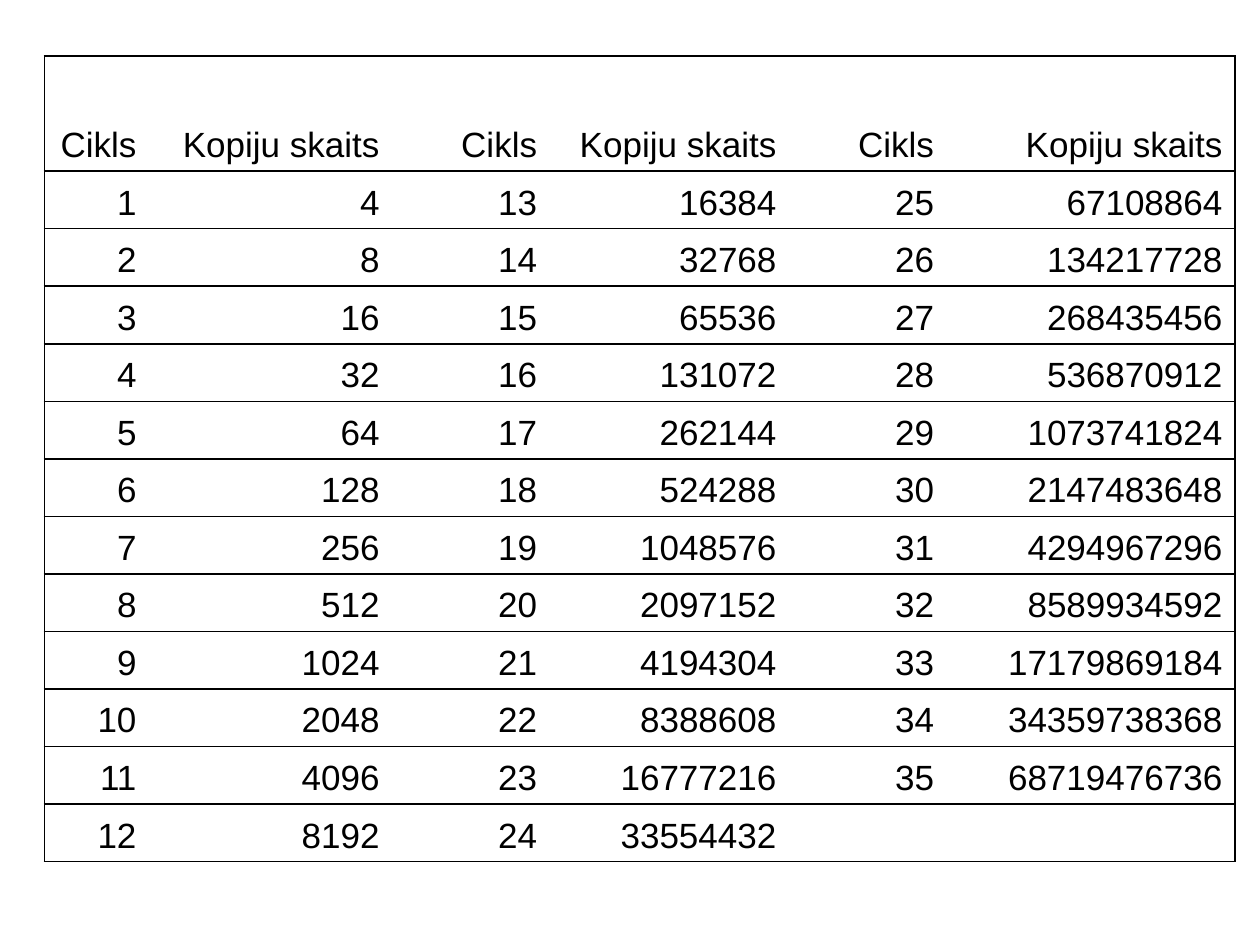
from dataclasses import dataclass

from lxml.etree import SubElement
from pptx import Presentation
from pptx.dml.color import RGBColor
from pptx.enum.text import MSO_ANCHOR as Anchor, PP_ALIGN as Align
from pptx.oxml.ns import qn
from pptx.util import Pt


@dataclass(frozen=True)
class Theme:
    font: str = "Arial"
    size: float = 20
    ink: str = "000000"
    paper: str = "FFFFFF"
    rule: float = 1


THEME = Theme()
LAST_CYCLE = 35
CYCLES_PER_BLOCK = 12
HEADINGS = ("Cikls", "Kopiju skaits")
COLUMN_WIDTHS = (59.8, 139, 31.7, 58.3, 136.8, 31.7, 58.3, 164.9)
BLOCK_STEP = 3  # cycle column, copies column, gap column
BLOCK_STARTS = range(0, len(COLUMN_WIDTHS), BLOCK_STEP)
ROW_HEIGHT = 32.9
HEADER_HEIGHT = 2 * ROW_HEIGHT


def copy_rows():
    """Lay out the cycles block by block; each cycle doubles the copies."""
    rows = [[""] * len(COLUMN_WIDTHS) for _ in range(CYCLES_PER_BLOCK + 1)]
    for start in BLOCK_STARTS:
        rows[0][start:start + 2] = HEADINGS
    for cycle in range(1, LAST_CYCLE + 1):
        block, line = divmod(cycle - 1, CYCLES_PER_BLOCK)
        start = BLOCK_STARTS[block]
        rows[line + 1][start:start + 2] = str(cycle), str(2 ** (cycle + 1))
    return rows


def set_borders(cell, visible):
    """Rule the sides named in visible and clear the others."""
    properties = cell._tc.get_or_add_tcPr()
    for side in "LRTB":
        line = SubElement(properties, qn(f"a:ln{side}"), w=str(Pt(THEME.rule)))
        if side in visible:
            fill = SubElement(line, qn("a:solidFill"))
            SubElement(fill, qn("a:srgbClr"), val=THEME.ink)
        else:
            SubElement(line, qn("a:noFill"))


def style_cell(cell, text):
    cell.fill.solid()
    cell.fill.fore_color.rgb = RGBColor.from_string(THEME.paper)
    cell.vertical_anchor = Anchor.BOTTOM
    cell.text_frame.text = text
    para = cell.text_frame.paragraphs[0]
    para.alignment = Align.RIGHT
    para.font.name = THEME.font
    para.font.size = Pt(THEME.size)
    para.font.color.rgb = RGBColor.from_string(THEME.ink)


def add_copy_table(page, left, top):
    rows = copy_rows()
    heights = [HEADER_HEIGHT] + [ROW_HEIGHT] * CYCLES_PER_BLOCK
    table = page.shapes.add_table(
        len(rows), len(COLUMN_WIDTHS), Pt(left), Pt(top),
        Pt(sum(COLUMN_WIDTHS)), Pt(sum(heights))).table
    table.first_row = False
    table.horz_banding = False

    # Grid sizes
    for column, width in zip(table.columns, COLUMN_WIDTHS):
        column.width = Pt(width)
    for row, height in zip(table.rows, heights):
        row.height = Pt(height)

    # Cells: rules between rows, and an outer frame
    outer_sides = {0: "L", len(COLUMN_WIDTHS) - 1: "R"}
    for row_index, values in enumerate(rows):
        for column_index, value in enumerate(values):
            cell = table.cell(row_index, column_index)
            set_borders(cell, "TB" + outer_sides.get(column_index, ""))
            style_cell(cell, value)


def main():
    deck = Presentation()
    deck.slide_width, deck.slide_height = Pt(720), Pt(540)
    page = deck.slides.add_slide(deck.slide_layouts[6])
    add_copy_table(page, left=25.4, top=32)
    deck.save("out.pptx")


if __name__ == "__main__":
    main()
